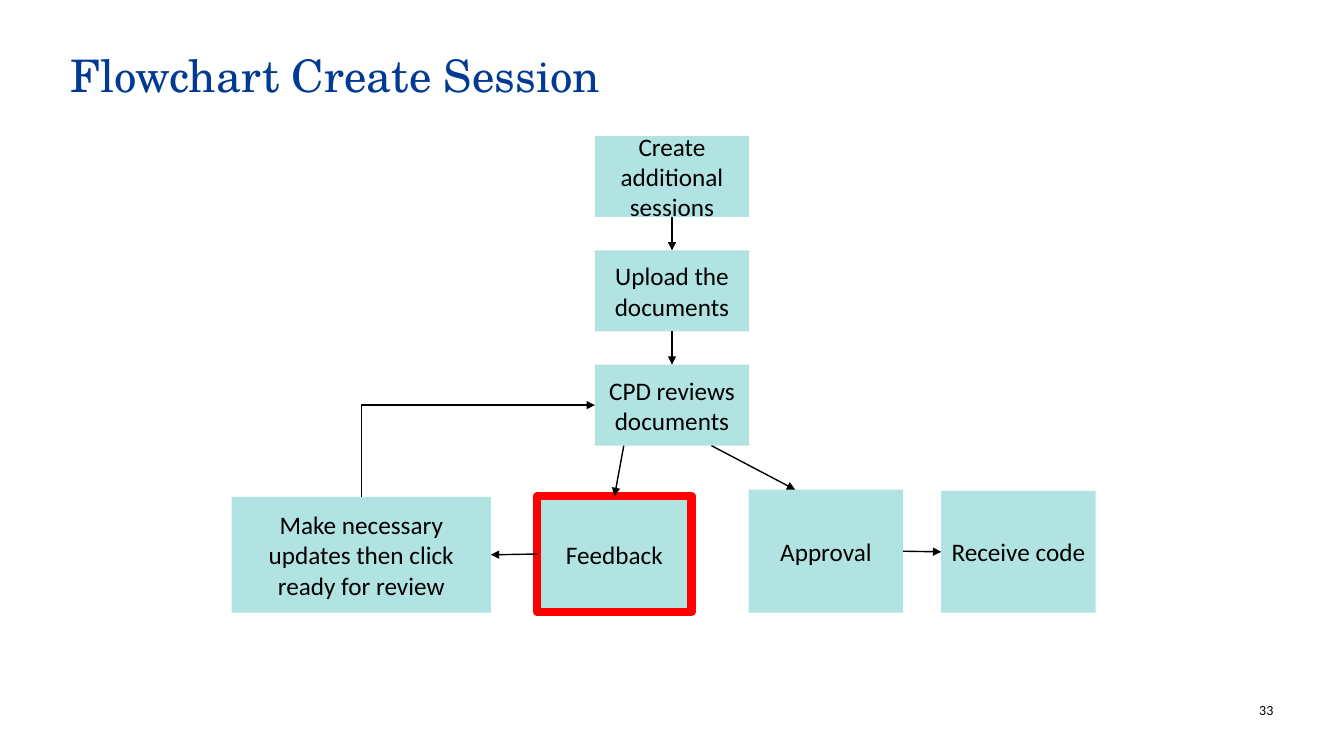
from dataclasses import dataclass

from lxml.etree import SubElement
from pptx import Presentation
from pptx.dml.color import RGBColor
from pptx.enum.shapes import MSO_CONNECTOR, MSO_SHAPE
from pptx.enum.text import MSO_ANCHOR, PP_ALIGN
from pptx.oxml.ns import qn
from pptx.shapes.autoshape import Shape
from pptx.shapes.connector import Connector
from pptx.slide import Slide
from pptx.text.text import TextFrame
from pptx.util import Cm, Pt

TEAL = RGBColor(0xB0, 0xE3, 0xE2)
RED = RGBColor(0xFF, 0x00, 0x00)
NAVY = RGBColor(0x00, 0x3A, 0x93)
BLACK = RGBColor(0x00, 0x00, 0x00)

STEP_WIDTH = 3.89
COLUMN_LEFT, COLUMN_TOP, COLUMN_PITCH, COLUMN_HEIGHT = 14.99, 3.43, 2.88, 2.04
TOP, LEFT, BOTTOM, RIGHT = range(4)


@dataclass(frozen=True)
class Step:
    """A flowchart box, measured in centimetres."""
    text: str
    left: float
    top: float
    height: float
    width: float = STEP_WIDTH
    highlighted: bool = False


COLUMN_TEXTS = ("Create additional sessions", "Upload the documents", "CPD reviews documents")
COLUMN_STEPS = [
    Step(text, COLUMN_LEFT, COLUMN_TOP + row * COLUMN_PITCH, COLUMN_HEIGHT)
    for row, text in enumerate(COLUMN_TEXTS)
]
OUTCOME_STEPS = [
    Step("Feedback", 13.54, 12.5, 2.92, highlighted=True),
    Step("Approval", 18.87, 12.34, 3.1),
    Step("Receive code", 23.72, 12.37, 3.07),
    Step("Make necessary updates then click ready for review", 5.84, 12.52, 2.92, width=6.53),
]


def write_text(frame: TextFrame, text: str, *, size: float = 18, font: str = "Calibri",
               color: RGBColor = BLACK, align: PP_ALIGN = PP_ALIGN.CENTER,
               anchor: MSO_ANCHOR = MSO_ANCHOR.MIDDLE, line_spacing: float = 1.0) -> None:
    frame.word_wrap = True
    frame.vertical_anchor = anchor
    paragraph = frame.paragraphs[0]
    paragraph.alignment = align
    paragraph.line_spacing = line_spacing
    run = paragraph.add_run()
    run.text = text
    run.font.size = Pt(size)
    run.font.name = font
    run.font.color.rgb = color


def add_label(slide: Slide, left: float, top: float, width: float, height: float) -> TextFrame:
    """Add a text box without margins."""
    frame = slide.shapes.add_textbox(Cm(left), Cm(top), Cm(width), Cm(height)).text_frame
    frame.margin_left = frame.margin_right = frame.margin_top = frame.margin_bottom = 0
    return frame


def add_step(slide: Slide, step: Step) -> Shape:
    box = slide.shapes.add_shape(MSO_SHAPE.RECTANGLE, Cm(step.left), Cm(step.top),
                                 Cm(step.width), Cm(step.height))
    box.shadow.inherit = False
    box.fill.solid()
    box.fill.fore_color.rgb = TEAL
    if step.highlighted:
        box.line.color.rgb = RED
        box.line.width = Pt(6)
    else:
        box.line.fill.background()
    write_text(box.text_frame, step.text)
    return box


def style_arrow(arrow: Connector) -> None:
    arrow.line.color.rgb = BLACK
    arrow.line.width = Pt(1)
    SubElement(arrow.line._get_or_add_ln(), qn("a:tailEnd"), type="triangle")
    SubElement(arrow.element.spPr, qn("a:effectLst"))


def add_arrow(slide: Slide, source: Shape, target: Shape, source_side: int, target_side: int) -> None:
    arrow = slide.shapes.add_connector(MSO_CONNECTOR.STRAIGHT, 0, 0, 0, 0)
    arrow.begin_connect(source, source_side)
    arrow.end_connect(target, target_side)
    style_arrow(arrow)


def add_return_arrow(slide: Slide, source: Shape, target: Shape) -> None:
    """Go up from the top of source, then right to the left side of target."""
    start_x, start_y = source.left + source.width // 2, source.top
    end_x, end_y = target.left, target.top + target.height // 2
    center_x, center_y = (start_x + end_x) // 2, (start_y + end_y) // 2
    half_run, half_rise = (end_x - start_x) // 2, (start_y - end_y) // 2
    # A one-bend connector runs across first, so it is laid out turned by 90 degrees.
    arrow = slide.shapes.add_connector(
        MSO_CONNECTOR.ELBOW, center_x + half_rise, center_y + half_run,
        center_x - half_rise, center_y - half_run)
    properties = arrow.element.spPr
    properties.find(qn("a:xfrm")).set("rot", "5400000")
    properties.find(qn("a:prstGeom")).set("prst", "bentConnector2")
    style_arrow(arrow)


def main() -> None:
    presentation = Presentation()
    presentation.slide_width, presentation.slide_height = Cm(33.87), Cm(19.05)
    slide = presentation.slides.add_slide(presentation.slide_layouts[6])

    write_text(add_label(slide, 31.12, 17.68, 0.97, 0.43), "33", size=10,
               align=PP_ALIGN.RIGHT, anchor=MSO_ANCHOR.TOP)
    write_text(add_label(slide, 1.78, 1.35, 30.28, 2.67), "Flowchart Create Session", size=32,
               font="TeX Gyre Schola", color=NAVY, align=PP_ALIGN.LEFT,
               anchor=MSO_ANCHOR.TOP, line_spacing=0.9)

    create, upload, review = [add_step(slide, step) for step in COLUMN_STEPS]
    feedback, approval, code, updates = [add_step(slide, step) for step in OUTCOME_STEPS]

    add_arrow(slide, create, upload, BOTTOM, TOP)
    add_arrow(slide, upload, review, BOTTOM, TOP)
    add_arrow(slide, approval, code, RIGHT, LEFT)
    add_arrow(slide, feedback, updates, LEFT, RIGHT)

    review_bottom = review.top + review.height
    to_feedback = slide.shapes.add_connector(
        MSO_CONNECTOR.STRAIGHT, Cm(15.72), review_bottom, 0, 0)
    to_feedback.end_connect(feedback, TOP)
    style_arrow(to_feedback)
    to_approval = slide.shapes.add_connector(
        MSO_CONNECTOR.STRAIGHT, Cm(17.93), review_bottom, Cm(20.04), approval.top)
    style_arrow(to_approval)

    add_return_arrow(slide, updates, review)
    presentation.save("out.pptx")


if __name__ == "__main__":
    main()
